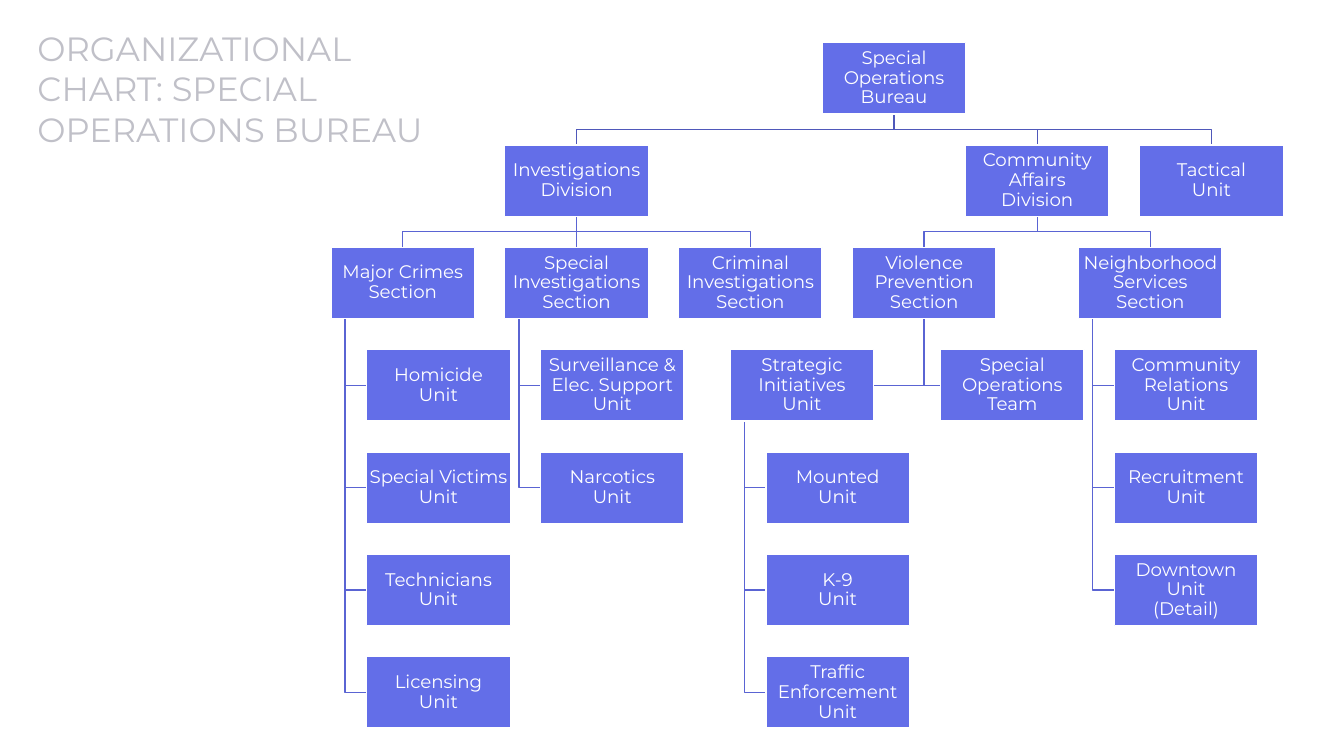
from dataclasses import dataclass, field

from lxml import etree
from pptx import Presentation
from pptx import util as u
from pptx.dml import color
from pptx.enum import shapes, text
from pptx.oxml import ns

COLOURS = {"title": "C0C0C8", "box": "636EE8", "white": "FFFFFF",
           "top_link": "4F58BA", "link": "5A64D3"}
FONT = "Montserrat"

# Lengths in centimetres, relative to the chart's box
BOX_W, BOX_H = 3.62, 1.8
COLUMN, ROW = 4.38, 2.58
INDENT, TRUNK = 0.9, 0.36


@dataclass
class Post:
    """One box; layout says how its members sit: fork, hang or flank."""
    name: str
    layout: str = "fork"
    members: list = field(default_factory=list)
    left: float = None
    top: float = 0

    @property
    def centre(self):
        return self.left + BOX_W / 2

    @property
    def middle(self):
        return self.top + BOX_H / 2

    @property
    def bottom(self):
        return self.top + BOX_H


def units(*names):
    return [Post(name) for name in names]


BUREAU = Post("Special Operations\nBureau", "fork", [
    Post("Investigations\nDivision", "fork", [
        Post("Major Crimes\nSection", "hang", units(
            "Homicide\nUnit", "Special Victims\nUnit",
            "Technicians\nUnit", "Licensing\nUnit"), left=0),
        Post("Special Investigations\nSection", "hang", units(
            "Surveillance & Elec. Support\nUnit", "Narcotics\nUnit"), left=COLUMN),
        Post("Criminal Investigations\nSection", left=2 * COLUMN),
    ]),
    Post("Community Affairs\nDivision", "fork", [
        Post("Violence Prevention\nSection", "flank", [
            Post("Strategic Initiatives\nUnit", "hang", units(
                "Mounted\nUnit", "K-9\nUnit", "Traffic\nEnforcement\nUnit"), left=10.06),
            Post("Special Operations\nTeam", left=15.36),
        ], left=3 * COLUMN),
        Post("Neighborhood Services\nSection", "hang", units(
            "Community Relations\nUnit", "Recruitment\nUnit",
            "Downtown\nUnit\n(Detail)"), left=18.84),
    ]),
    Post("Tactical\nUnit", left=20.38),
])


def place(post, row=0):
    """Set the position of a post and of everything below it."""
    post.top = row * ROW
    for i, member in enumerate(post.members):
        if post.layout == "hang":
            member.left = post.left + INDENT
            place(member, row + 1 + i)
        else:
            place(member, row + 1)
    if post.left is None:
        post.left = (post.members[0].left + post.members[-1].left) / 2


def walk(post):
    yield post
    for member in post.members:
        yield from walk(member)


def route(post, member):
    """Corner points of the link from a post to one of its members."""
    if post.layout == "fork":
        bend = (post.bottom + member.top) / 2
        return [(post.centre, post.bottom), (post.centre, bend),
                (member.centre, bend), (member.centre, member.top)]
    trunk = post.left + TRUNK if post.layout == "hang" else post.centre
    side = member.left if member.left > trunk else member.left + BOX_W
    return [(trunk, post.bottom), (trunk, member.middle), (side, member.middle)]


def style_run(run, size, colour):
    run.font.size = u.Pt(size)
    run.font.name = FONT
    run.font.color.rgb = color.RGBColor.from_string(COLOURS[colour])


def style_line(line, colour):
    line.color.rgb = color.RGBColor.from_string(COLOURS[colour])
    line.width = u.Pt(1)


def write_lines(paragraph, wording, size, colour):
    for i, words in enumerate(wording.split("\n")):
        if i:
            paragraph.add_line_break()
        run = paragraph.add_run()
        run.text = words
        style_run(run, size, colour)


def add_title(slide, left, top, width, height):
    title = slide.shapes.title
    title.left, title.top = u.Cm(left), u.Cm(top)
    title.width, title.height = u.Cm(width), u.Cm(height)
    frame = title.text_frame
    frame.word_wrap = True
    frame.auto_size = text.MSO_AUTO_SIZE.NONE
    frame.vertical_anchor = text.MSO_ANCHOR.TOP
    heading = frame.paragraphs[0]
    heading.alignment = text.PP_ALIGN.LEFT
    write_lines(heading, "ORGANIZATIONAL\nCHART: SPECIAL OPERATIONS BUREAU", 24, "title")


def add_straight_link(slide, start, end, colour):
    (x1, y1), (x2, y2) = start, end
    link = slide.shapes.add_connector(shapes.MSO_CONNECTOR.STRAIGHT, x1, y1, x2, y2)
    style_line(link.line, colour)
    etree.SubElement(link.element.spPr, ns.qn("a:effectLst"))
    return link


def add_bent_link(slide, points, colour):
    outline = slide.shapes.build_freeform(*points[0])
    outline.add_line_segments(points[1:], close=False)
    link = outline.convert_to_shape()
    link.fill.background()
    link.shadow.inherit = False
    style_line(link.line, colour)


def add_box(slide, post, left, top):
    box = slide.shapes.add_shape(
        shapes.MSO_SHAPE.RECTANGLE, u.Cm(left + post.left), u.Cm(top + post.top),
        u.Cm(BOX_W), u.Cm(BOX_H))
    box.shadow.inherit = False
    box.fill.solid()
    box.fill.fore_color.rgb = color.RGBColor.from_string(COLOURS["box"])
    style_line(box.line, "white")
    frame = box.text_frame
    frame.word_wrap = True
    frame.vertical_anchor = text.MSO_ANCHOR.MIDDLE
    frame.margin_left = frame.margin_right = u.Cm(0.02)
    frame.margin_top = frame.margin_bottom = u.Cm(0.02)
    label = frame.paragraphs[0]
    label.alignment = text.PP_ALIGN.CENTER
    label.line_spacing = 0.9
    write_lines(label, post.name, 13, "white")
    return box


def add_chart_of_posts(slide, bureau, left, top):
    """Draw the links first, so that the boxes lie over their ends."""
    place(bureau)
    straight = []
    for post in walk(bureau):
        colour = "top_link" if post is bureau else "link"
        for member in post.members:
            points = [(u.Cm(left + x), u.Cm(top + y)) for x, y in route(post, member)]
            if abs(post.centre - member.centre) < 0.01:
                link = add_straight_link(slide, points[0], points[-1], colour)
                straight.append((link, post, member))
            else:
                add_bent_link(slide, points, colour)
    boxes = {id(post): add_box(slide, post, left, top) for post in walk(bureau)}
    for link, post, member in straight:
        link.begin_connect(boxes[id(post)], 2)
        link.end_connect(boxes[id(member)], 0)


def main():
    deck = Presentation()
    deck.slide_width, deck.slide_height = u.Cm(33.87), u.Cm(19.05)
    slide = deck.slides.add_slide(deck.slide_layouts[5])
    add_title(slide, 0.69, 0.58, 10.44, 3.33)
    add_chart_of_posts(slide, BUREAU, 8.34, 1.07)
    deck.save("out.pptx")


if __name__ == "__main__":
    main()
